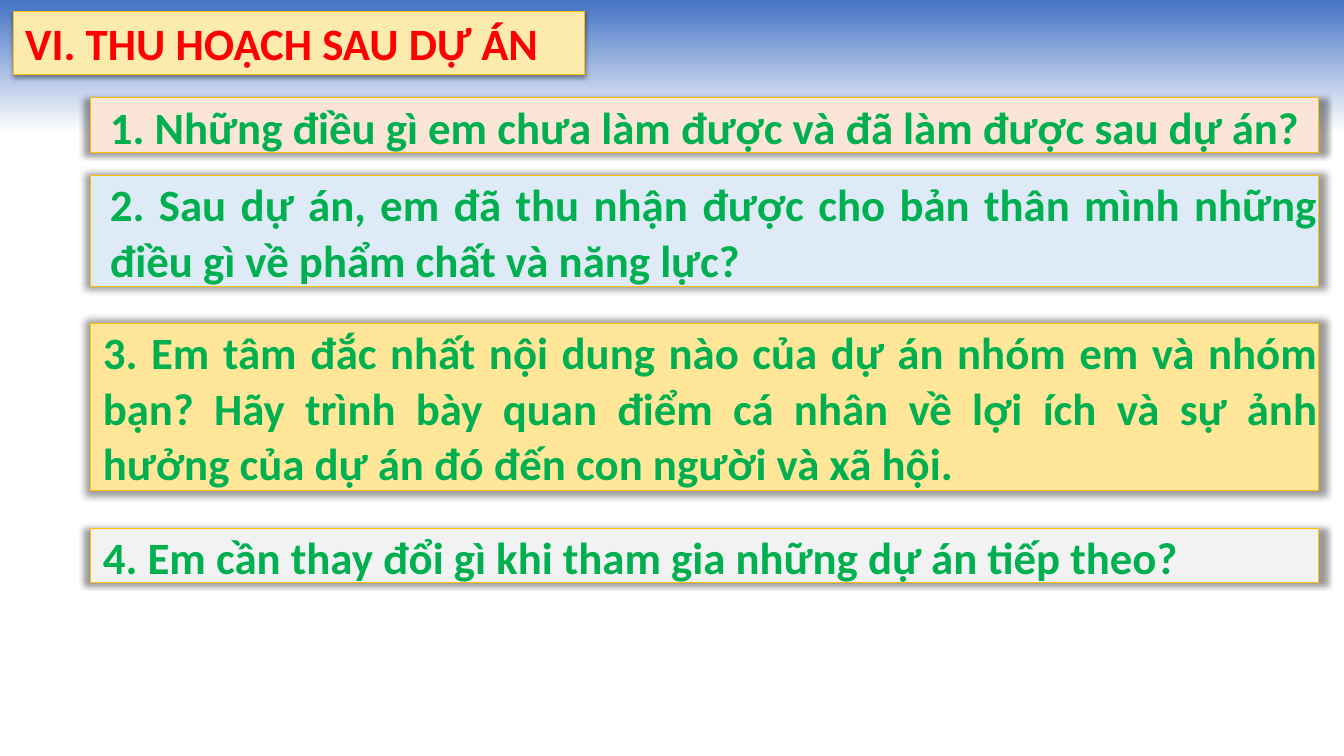
from dataclasses import dataclass

from lxml.etree import SubElement
from pptx import Presentation
from pptx.dml.color import RGBColor
from pptx.enum.shapes import MSO_SHAPE
from pptx.enum.text import MSO_ANCHOR, MSO_AUTO_SIZE, PP_ALIGN
from pptx.oxml.ns import qn
from pptx.util import Emu, Pt

SCALE = 9144  # EMU in one px, at 100 px to the inch

COLORS = {
    "blue": "4472C4", "white": "FFFFFF", "black": "000000",
    "cream": "FDEAAD", "peach": "FBE5D6", "sky": "DEEBF7",
    "sand": "FFE699", "gray": "F2F2F2",
    "gold": "FFC000", "red": "FF0000", "green": "00B050",
}


@dataclass(frozen=True)
class Shade:
    """Outer shadow: lengths in points, opacity and growth in percent."""
    blur: float
    dist: float
    alpha: int
    grow_x: int = 100
    grow_y: int = 100
    align: str = "ctr"


@dataclass(frozen=True)
class Style:
    ink: str
    line: float
    align: PP_ALIGN
    spacing: float | Pt
    after: int
    shade: Shade


@dataclass(frozen=True)
class Box:
    text: str
    left: int
    top: int
    width: int
    height: int
    fill: str
    indent: int
    style: Style


def px(count: int) -> Emu:
    return Emu(count * SCALE)


def color(name: str) -> RGBColor:
    return RGBColor.from_string(COLORS[name])


def add_rect(slide, left: int, top: int, width: int, height: int):
    rect = slide.shapes.add_shape(
        MSO_SHAPE.RECTANGLE, px(left), px(top), px(width), px(height))
    rect.shadow.inherit = False
    return rect


def add_band(slide) -> None:
    """Draw the blue-to-white fade along the top."""
    band = add_rect(slide, 0, -1, 1333, 133)
    band.line.fill.background()
    band.fill.gradient()
    band.fill.gradient_angle = 270
    for stop, place, name in zip(band.fill.gradient_stops, (0, 1), ("blue", "white")):
        stop.position = place
        stop.color.rgb = color(name)


def add_shade(shape, shade: Shade) -> None:
    effects = shape._element.spPr.find(qn("a:effectLst"))
    outer = SubElement(
        effects, qn("a:outerShdw"),
        blurRad=str(Pt(shade.blur)), dist=str(Pt(shade.dist)), dir="5400000",
        sx=str(shade.grow_x * 1000), sy=str(shade.grow_y * 1000),
        algn=shade.align, rotWithShape="0")
    tint = SubElement(outer, qn("a:srgbClr"), val=COLORS["black"])
    SubElement(tint, qn("a:alpha"), val=str(shade.alpha * 1000))


def add_box(slide, box: Box) -> None:
    style = box.style
    shape = add_rect(slide, box.left, box.top, box.width, box.height)
    shape.fill.solid()
    shape.fill.fore_color.rgb = color(box.fill)
    shape.line.color.rgb = color("gold")
    shape.line.width = Pt(style.line)
    add_shade(shape, style.shade)

    frame = shape.text_frame
    frame.margin_left = frame.margin_right = 0
    frame.margin_top = frame.margin_bottom = 0
    frame.word_wrap = True
    frame.vertical_anchor = MSO_ANCHOR.TOP
    frame.auto_size = MSO_AUTO_SIZE.SHAPE_TO_FIT_TEXT

    para = frame.paragraphs[0]
    para.alignment = style.align
    para.line_spacing = style.spacing
    para.space_after = Pt(style.after)
    para._p.get_or_add_pPr().set("marL", str(px(box.indent)))
    run = para.add_run()
    run.text = box.text
    run.font.name = "Calibri"
    run.font.size = Pt(32)
    run.font.bold = True
    run.font.color.rgb = color(style.ink)


TITLE = Style("red", 0.75, PP_ALIGN.LEFT, 1.09, 3, Shade(3.1, 1.6, 38, align="t"))
ASK = Style("green", 0.5, PP_ALIGN.JUSTIFY, Pt(39.6), 0, Shade(5, 0, 40, 101, 104))

LEFT, WIDTH = 90, 1218
BOXES = [
    Box("VI. THU HOẠCH SAU DỰ ÁN", 13, 11, 567, 63, "cream", 12, TITLE),
    Box("1. Những điều gì em chưa làm được và đã làm được sau dự án?",
        LEFT, 97, WIDTH, 54, "peach", 19, ASK),
    Box("2. Sau dự án, em đã thu nhận được cho bản thân mình những điều gì "
        "về phẩm chất và năng lực?",
        LEFT, 174, WIDTH, 110, "sky", 19, ASK),
    Box("3. Em tâm đắc nhất nội dung nào của dự án nhóm em và nhóm bạn? "
        "Hãy trình bày quan điểm cá nhân về lợi ích và sự ảnh hưởng "
        "của dự án đó đến con người và xã hội.",
        LEFT, 321, WIDTH, 166, "sand", 12, ASK),
    Box("4. Em cần thay đổi gì khi tham gia những dự án tiếp theo?",
        LEFT, 524, WIDTH, 54, "gray", 12, ASK),
]


def main() -> None:
    deck = Presentation()
    deck.slide_width, deck.slide_height = px(1333), px(750)
    slide = deck.slides.add_slide(deck.slide_layouts[6])
    add_band(slide)
    for box in BOXES:
        add_box(slide, box)
    deck.save("out.pptx")


if __name__ == "__main__":
    main()
